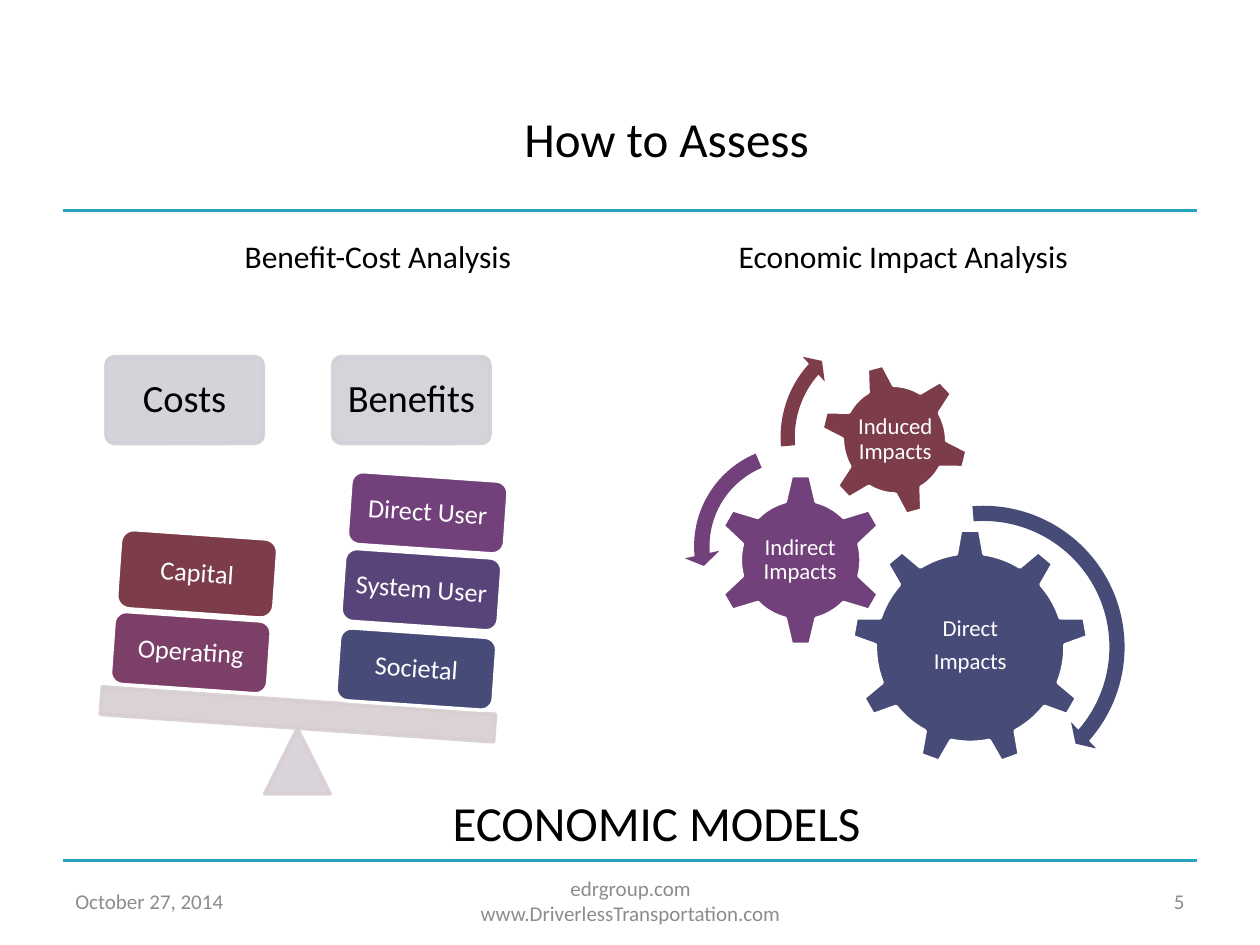
"""Build the "How to Assess" slide with a cost-benefit scale and impact gears."""
from lxml import etree
from pptx import Presentation
from pptx.dml.color import RGBColor
from pptx.enum.shapes import MSO_CONNECTOR, MSO_SHAPE
from pptx.enum.text import MSO_ANCHOR, MSO_AUTO_SIZE, PP_ALIGN
from pptx.oxml.ns import qn
from pptx.util import Inches, Pt


def paint(fill, color, opacity=100):
    fill.solid()
    fill.fore_color.rgb = RGBColor.from_string(color)
    if opacity < 100:
        for rgb in fill._xPr.iter(qn("a:srgbClr")):
            if rgb.find(qn("a:alpha")) is None:
                etree.SubElement(rgb, qn("a:alpha")).set("val", str(opacity * 1000))


def write(shape, lines, size, color, align=PP_ALIGN.CENTER, inset=None,
          spacing=None, anchor=MSO_ANCHOR.MIDDLE):
    frame = shape.text_frame
    frame.word_wrap = True
    frame.auto_size = MSO_AUTO_SIZE.NONE
    frame.vertical_anchor = anchor
    if inset is not None:
        frame.margin_left = frame.margin_right = Inches(inset)
        frame.margin_top = frame.margin_bottom = Inches(inset)
    for index, line in enumerate(lines):
        paragraph = frame.paragraphs[0] if index == 0 else frame.add_paragraph()
        paragraph.alignment = align
        if spacing:
            paragraph.line_spacing = spacing
            paragraph.space_after = Pt(size * 0.35)
        run = paragraph.add_run()
        run.text = line
        run.font.name = "Calibri"
        run.font.size = Pt(size)
        paint(run.font.fill, color)


BLACK, WHITE, GREY, TEAL = "000000", "FFFFFF", "8C8C8C", "28A1BE"
NAVY, PURPLE, MAROON = "474B78", "72417B", "7D3C4A"

prs = Presentation()
prs.slide_width, prs.slide_height = Inches(10), Inches(7.5)
slide = prs.slides.add_slide(prs.slide_layouts[5])
shapes = slide.shapes

title = shapes.title
title.left, title.top = Inches(2.33), Inches(0.47)
title.width, title.height = Inches(5.92), Inches(1.25)
write(title, ["How to Assess"], 28, BLACK)

for y in (1.67, 6.83):
    rule = shapes.add_connector(MSO_CONNECTOR.STRAIGHT, Inches(0.5), Inches(y),
                                Inches(9.5), Inches(y))
    paint(rule.line.fill, TEAL)
    rule.line.width = Pt(1.5)
    etree.SubElement(rule._element.spPr, qn("a:effectLst"))

pale_parts = [
    (MSO_SHAPE.ROUNDED_RECTANGLE, 0.84, 2.83, 1.25, 0.69, 0, "CFD0D6", "Costs"),
    (MSO_SHAPE.ROUNDED_RECTANGLE, 2.64, 2.83, 1.25, 0.69, 0, "D3CFD7", "Benefits"),
    (MSO_SHAPE.ISOSCELES_TRIANGLE, 2.1, 5.78, 0.52, 0.52, 0, "D7CFD5", ""),
    (MSO_SHAPE.RECTANGLE, 0.8, 5.56, 3.13, 0.22, 4, "D7CED0", ""),
]
for kind, x, y, w, h, angle, color, label in pale_parts:
    part = shapes.add_shape(kind, Inches(x), Inches(y), Inches(w), Inches(h))
    part.shadow.inherit = False
    part.rotation = angle
    paint(part.fill, color, 90)
    paint(part.line.fill, color, 90)
    part.line.width = Pt(2)
    if label:
        part.adjustments[0] = 0.1
        write(part, [label], 22, BLACK, inset=0.05, spacing=0.9)

weights = [
    ("Societal", 2.68, 5.02, 0.58, NAVY),
    ("System User", 2.72, 4.39, 0.58, "594479"),
    ("Direct User", 2.77, 3.78, 0.58, PURPLE),
    ("Operating", 0.89, 4.89, 0.58, "7C3F68"),
    ("Capital", 0.94, 4.24, 0.63, MAROON),
]
for label, x, y, height, color in weights:
    weight = shapes.add_shape(MSO_SHAPE.ROUNDED_RECTANGLE, Inches(x), Inches(y),
                              Inches(1.25), Inches(height))
    weight.shadow.inherit = False
    weight.rotation = 4
    paint(weight.fill, color)
    paint(weight.line.fill, WHITE)
    weight.line.width = Pt(2)
    write(weight, [label], 15, WHITE, inset=0.05, spacing=0.9)

gears = [
    (MSO_SHAPE.GEAR_9, 6.76, 4.2, 1.88, 1.88, 0, NAVY,
     ["Direct", "Impacts"], 7.14, 4.64, 1.12, 0.97),
    (MSO_SHAPE.GEAR_6, 5.67, 3.76, 1.37, 1.37, 0, PURPLE,
     ["Indirect Impacts"], 6.01, 4.11, 0.68, 0.67),
    (MSO_SHAPE.GEAR_6, 6.51, 2.88, 1.18, 1.22, 345, MAROON,
     ["Induced Impacts"], 6.77, 3.15, 0.67, 0.68),
]
for kind, x, y, w, h, angle, color, lines, *label_box in gears:
    gear = shapes.add_shape(kind, Inches(x), Inches(y), Inches(w), Inches(h))
    gear.shadow.inherit = False
    gear.rotation = angle
    paint(gear.fill, color)
    paint(gear.line.fill, WHITE)
    gear.line.width = Pt(2)
    gear_label = shapes.add_textbox(*map(Inches, label_box))
    write(gear_label, lines, 13, WHITE, inset=0.02, spacing=0.9)

turns = [
    (MSO_SHAPE.CIRCULAR_ARROW, 6.6, 3.93, 2.41, NAVY,
     (0.05, 2.99, 24.84, 159.33, 0.06)),
    (MSO_SHAPE.LEFT_CIRCULAR_ARROW, 5.43, 3.46, 1.75, PURPLE,
     (0.07, 4.3, 104.89, 148.38, 0.08)),
    (MSO_SHAPE.CIRCULAR_ARROW, 6.12, 2.53, 1.88, MAROON,
     (0.06, 3.94, 133.14, 105.08, 0.07)),
]
for kind, x, y, side, color, bends in turns:
    turn = shapes.add_shape(kind, Inches(x), Inches(y), Inches(side), Inches(side))
    turn.shadow.inherit = False
    paint(turn.fill, color)
    turn.line.fill.background()
    for index, bend in enumerate(bends):
        turn.adjustments[index] = bend

for heading, x in (("Benefit-Cost Analysis", 1.25), ("Economic Impact Analysis", 5.42)):
    column_heading = shapes.add_textbox(Inches(x), Inches(1.83), Inches(3.5), Inches(0.4))
    write(column_heading, [heading], 18, BLACK, anchor=MSO_ANCHOR.TOP)

conclusion = shapes.add_textbox(Inches(2.25), Inches(5.9), Inches(5.92), Inches(1.25))
write(conclusion, ["ECONOMIC MODELS"], 28, BLACK)

footers = [
    (["October 27, 2014"], 0.5, 2.33, PP_ALIGN.LEFT),
    (["edrgroup.com", "www.DriverlessTransportation.com"], 3.42, 3.17, PP_ALIGN.CENTER),
    (["5"], 7.17, 2.33, PP_ALIGN.RIGHT),
]
for lines, x, width, align in footers:
    footer = shapes.add_textbox(Inches(x), Inches(6.95), Inches(width), Inches(0.4))
    write(footer, lines, 12, GREY, align)

prs.save("out.pptx")
